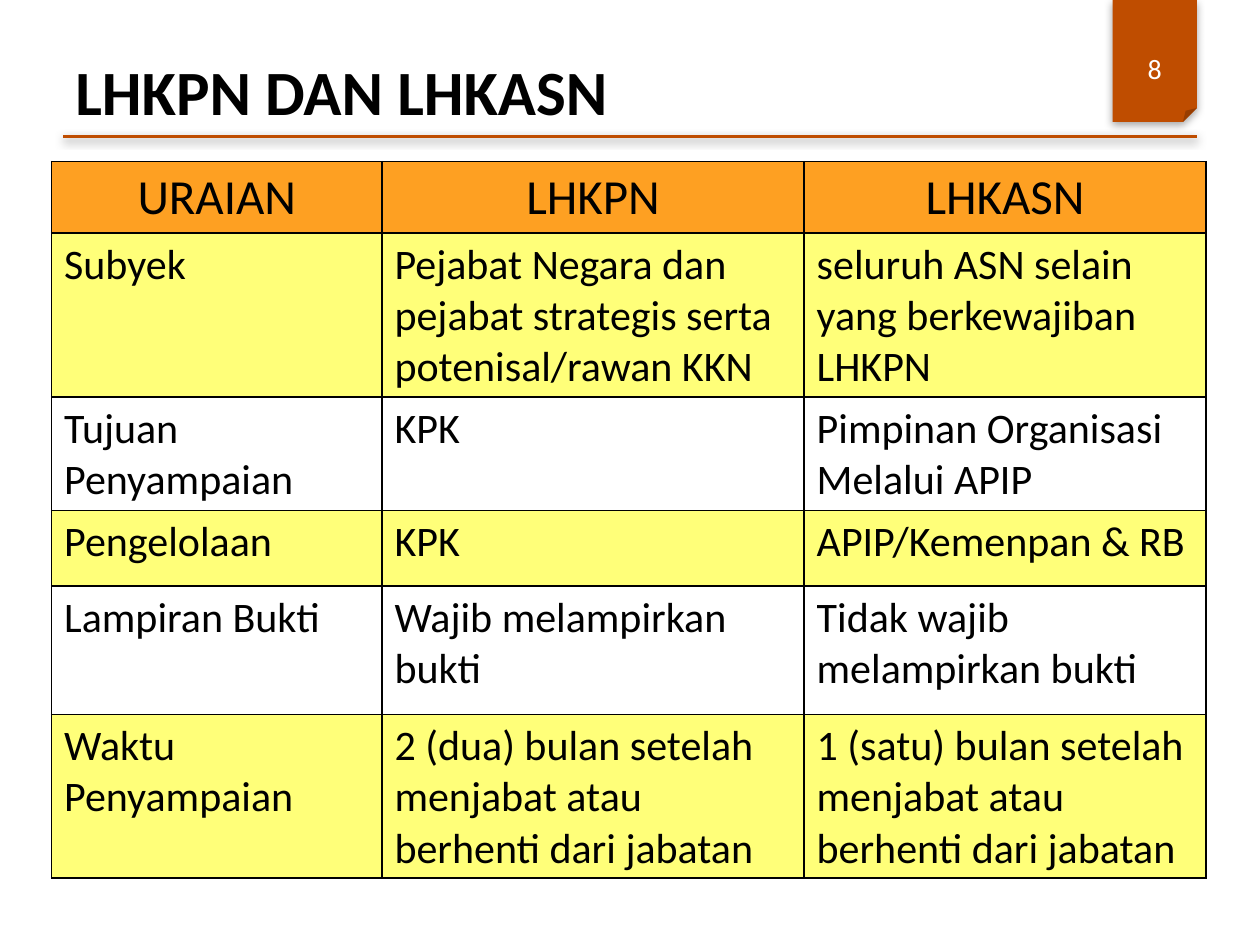
from dataclasses import dataclass

from lxml import etree
from pptx import Presentation, util as u
from pptx.dml.color import RGBColor
from pptx.enum import shapes, text
from pptx.oxml.ns import qn


@dataclass(frozen=True)
class Theme:
    font: str = "Calibri"
    ink: str = "000000"
    paper: str = "FFFFFF"
    accent: str = "BF4D00"
    header: str = "FEA022"
    band: str = "FFFF79"
    title_size: int = 36
    header_size: int = 28
    body_size: int = 24
    number_size: int = 16


@dataclass(frozen=True)
class Box:
    left: float
    top: float
    width: float
    height: float

    def lengths(self) -> tuple:
        return tuple(u.Cm(v) for v in (self.left, self.top, self.width, self.height))


@dataclass(frozen=True)
class Row:
    height: float
    cells: tuple[str, str, str]


THEME = Theme()
TAB = Box(22.43, 0, 1.7, 2.46)
NUMBER = Box(22.43, 0.84, 1.7, 1.07)
TITLE = Box(1.27, 0.76, 22.86, 2.11)
RULE = Box(1.27, 2.75, 22.86, 0)
TABLE = Box(1.04, 3.26, 23.27, 14.45)
COLUMNS = (6.66, 8.51, 8.1)
ROWS = (
    Row(1.22, ("URAIAN", "LHKPN", "LHKASN")),
    Row(2.87, ("Subyek",
               "Pejabat Negara dan pejabat strategis serta potenisal/rawan KKN",
               "seluruh ASN selain yang berkewajiban LHKPN")),
    Row(2.16, ("Tujuan Penyampaian", "KPK", "Pimpinan Organisasi Melalui APIP")),
    Row(1.52, ("Pengelolaan", "KPK", "APIP/Kemenpan & RB")),
    Row(2.59, ("Lampiran Bukti", "Wajib melampirkan bukti",
               "Tidak wajib melampirkan bukti")),
    Row(2.87, ("Waktu Penyampaian",
               "2 (dua) bulan setelah menjabat atau berhenti dari jabatan",
               "1 (satu) bulan setelah menjabat atau berhenti dari jabatan")),
)


def rgb(color: str) -> RGBColor:
    return RGBColor.from_string(color)


def write(tf, words: str, size: int, color: str, bold: bool = False,
          align=text.PP_ALIGN.LEFT) -> None:
    tf.word_wrap = True
    p = tf.paragraphs[0]
    p.alignment = align
    r = p.add_run()
    r.text = words
    r.font.name = THEME.font
    r.font.size = u.Pt(size)
    r.font.bold = bold
    r.font.color.rgb = rgb(color)


def add_text(s, box: Box, words: str, size: int, color: str, **style) -> None:
    tf = s.shapes.add_textbox(*box.lengths()).text_frame
    tf.vertical_anchor = text.MSO_ANCHOR.MIDDLE
    write(tf, words, size, color, **style)


def add_shadow(sp, opacity: int, distance: float) -> None:
    effects = etree.SubElement(sp._element.spPr, qn("a:effectLst"))
    shadow = etree.SubElement(effects, qn("a:outerShdw"), blurRad=str(u.Pt(5)),
                              dist=str(u.Pt(distance)), dir="5400000", rotWithShape="0")
    color = etree.SubElement(shadow, qn("a:srgbClr"), val=THEME.ink)
    etree.SubElement(color, qn("a:alpha"), val=str(opacity * 1000))


def add_tab(s) -> None:
    sp = s.shapes.add_shape(shapes.MSO_SHAPE.FOLDED_CORNER, *TAB.lengths())
    sp.fill.solid()
    sp.fill.fore_color.rgb = rgb(THEME.accent)
    sp.line.fill.background()
    add_shadow(sp, 35, 1.8)


def add_rule(s) -> None:
    left, top, width, _ = RULE.lengths()
    line = s.shapes.add_connector(shapes.MSO_CONNECTOR.STRAIGHT, left, top, left + width, top)
    line.line.color.rgb = rgb(THEME.accent)
    line.line.width = u.Pt(2)
    add_shadow(line, 38, 1.6)


def add_borders(cell) -> None:
    tc_pr = cell._tc.get_or_add_tcPr()
    for i, side in enumerate(("lnL", "lnR", "lnT", "lnB")):
        ln = etree.Element(qn(f"a:{side}"), w=str(u.Pt(1)))
        fill = etree.SubElement(ln, qn("a:solidFill"))
        etree.SubElement(fill, qn("a:srgbClr"), val=THEME.ink)
        tc_pr.insert(i, ln)


def fill_cell(cell, words: str, row: int) -> None:
    header = row == 0
    if header or row % 2:
        cell.fill.solid()
        cell.fill.fore_color.rgb = rgb(THEME.header if header else THEME.band)
    else:
        cell.fill.background()
    add_borders(cell)
    cell.vertical_anchor = text.MSO_ANCHOR.MIDDLE if header else text.MSO_ANCHOR.TOP
    write(cell.text_frame, words, THEME.header_size if header else THEME.body_size,
          THEME.ink, align=text.PP_ALIGN.CENTER if header else text.PP_ALIGN.LEFT)


def add_comparison(s) -> None:
    table = s.shapes.add_table(len(ROWS), len(COLUMNS), *TABLE.lengths()).table
    table.first_row = table.horz_banding = False
    for column, width in zip(table.columns, COLUMNS):
        column.width = u.Cm(width)
    for i, row in enumerate(ROWS):
        table.rows[i].height = u.Cm(row.height)
        for j, words in enumerate(row.cells):
            fill_cell(table.cell(i, j), words, i)


def main() -> None:
    prs = Presentation()
    prs.slide_width, prs.slide_height = u.Cm(25.4), u.Cm(19.05)
    s = prs.slides.add_slide(prs.slide_layouts[6])
    add_tab(s)
    add_rule(s)
    add_text(s, TITLE, "LHKPN DAN LHKASN", THEME.title_size, THEME.ink, bold=True)
    add_text(s, NUMBER, "8", THEME.number_size, THEME.paper, align=text.PP_ALIGN.CENTER)
    add_comparison(s)
    prs.save("out.pptx")


if __name__ == "__main__":
    main()
